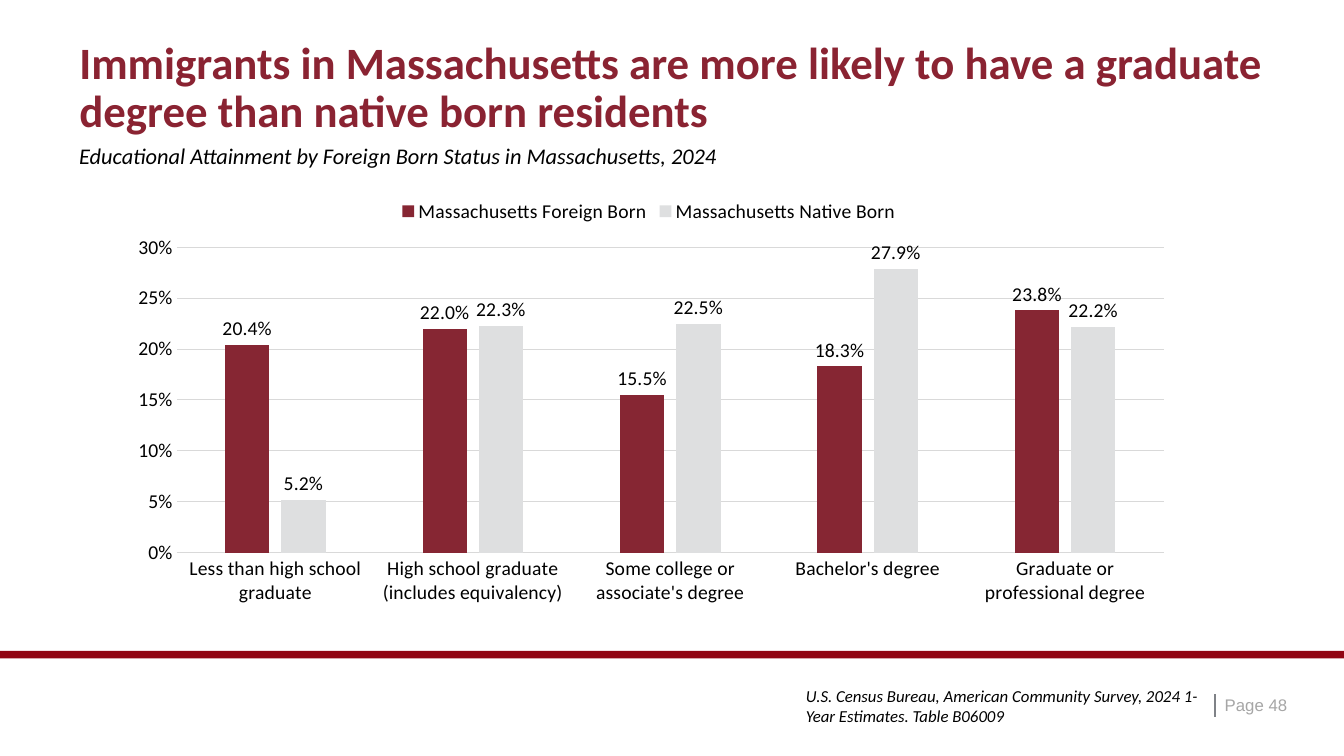
"""Build the slide on educational attainment by foreign born status."""
from dataclasses import dataclass

import pptx
import pptx.chart.data
import pptx.dml.color
import pptx.enum.chart
import pptx.enum.shapes
import pptx.enum.text
import pptx.oxml
import pptx.util
from lxml import etree

EMU_PER_PX = 9525


@dataclass(frozen=True)
class Theme:
    title_color: str = "8A2332"
    text_color: str = "000000"
    page_color: str = "A6A6A6"
    band_color: str = "910513"
    divider_color: str = "7F8287"
    grid_color: str = "D9D9D9"
    font: str = "Calibri"
    page_font: str = "Arial"
    title_size: int = 32
    subtitle_size: int = 16
    chart_size: int = 14
    small_size: int = 12


@dataclass(frozen=True)
class Box:
    left: int
    top: int
    width: int
    height: int

    def emu(self) -> tuple:
        return tuple(px(value) for value in (self.left, self.top, self.width, self.height))


@dataclass(frozen=True)
class Label:
    text: str
    box: Box
    size: int
    color: str
    font: str
    bold: bool = False
    italic: bool = False
    middle: bool = True
    line_spacing: float = 1.0


@dataclass(frozen=True)
class Series:
    name: str
    color: str
    values: tuple


THEME = Theme()

TITLE = Label(
    "Immigrants in Massachusetts are more likely to have a graduate degree than native born residents",
    Box(66, 49, 1149, 72), THEME.title_size, THEME.title_color, THEME.font, bold=True, line_spacing=0.9)
LABELS = (
    Label("Educational Attainment by Foreign Born Status in Massachusetts, 2024",
          Box(66, 134, 1104, 37), THEME.subtitle_size, THEME.text_color, THEME.font,
          italic=True, middle=False, line_spacing=0.9),
    Label("U.S. Census Bureau, American Community Survey, 2024 1-Year Estimates. Table B06009",
          Box(758, 648, 395, 48), THEME.small_size, THEME.text_color, THEME.font, italic=True),
    Label("Page 48", Box(1157, 661, 101, 21), THEME.small_size, THEME.page_color, THEME.page_font),
)
CATEGORIES = (
    "Less than high school graduate",
    "High school graduate (includes equivalency)",
    "Some college or associate's degree",
    "Bachelor's degree",
    "Graduate or professional degree",
)
SERIES = (
    Series("Massachusetts Foreign Born", "862633", (0.204, 0.22, 0.155, 0.183, 0.238)),
    Series("Massachusetts Native Born", "DEDFE0", (0.052, 0.223, 0.225, 0.279, 0.222)),
)
CHART_BOX = Box(107, 179, 1022, 404)
PLOT_FRACTIONS = {"x": 0.06, "y": 0.14, "w": 0.92, "h": 0.72}


def px(value: int) -> int:
    return pptx.util.Emu(value * EMU_PER_PX)


def rgb(color: str) -> pptx.dml.color.RGBColor:
    return pptx.dml.color.RGBColor.from_string(color)


def write_label(shape, label: Label) -> None:
    shape.left, shape.top, shape.width, shape.height = label.box.emu()
    frame = shape.text_frame
    frame.word_wrap = True
    frame.auto_size = pptx.enum.text.MSO_AUTO_SIZE.NONE
    anchors = pptx.enum.text.MSO_ANCHOR
    frame.vertical_anchor = anchors.MIDDLE if label.middle else anchors.TOP
    paragraph = frame.paragraphs[0]
    paragraph.alignment = pptx.enum.text.PP_ALIGN.LEFT
    paragraph.line_spacing = label.line_spacing
    run = paragraph.add_run()
    run.text = label.text
    run.font.name = label.font
    run.font.size = pptx.util.Pt(label.size)
    run.font.bold = label.bold
    run.font.italic = label.italic
    run.font.color.rgb = rgb(label.color)


def add_footer_lines(slide) -> None:
    band = slide.shapes.add_shape(
        pptx.enum.shapes.MSO_SHAPE.RECTANGLE, *Box(0, 620, 1280, 7).emu())
    band.shadow.inherit = False
    band.fill.solid()
    band.fill.fore_color.rgb = rgb(THEME.band_color)
    band.line.fill.background()
    divider = slide.shapes.add_connector(
        pptx.enum.shapes.MSO_CONNECTOR.STRAIGHT, px(1157), px(661), px(1157), px(683))
    divider.line.color.rgb = rgb(THEME.divider_color)
    divider.line.width = pptx.util.Pt(1.25)
    etree.SubElement(divider._element.spPr, pptx.oxml.ns.qn("a:effectLst"))


def style_chart_font(font) -> None:
    font.name = THEME.font
    font.size = pptx.util.Pt(THEME.chart_size)
    font.color.rgb = rgb(THEME.text_color)


def style_line(line) -> None:
    line.color.rgb = rgb(THEME.grid_color)
    line.width = pptx.util.Pt(0.75)


def place_plot(chart) -> None:
    qn = pptx.oxml.ns.qn
    plot_area = chart._chartSpace.chart.plotArea
    for layout in plot_area.findall(qn("c:layout")):
        plot_area.remove(layout)
    layout = etree.Element(qn("c:layout"))
    plot_area.insert(0, layout)
    manual = etree.SubElement(layout, qn("c:manualLayout"))
    settings = {"layoutTarget": "inner", "xMode": "edge", "yMode": "edge", **PLOT_FRACTIONS}
    for name, value in settings.items():
        etree.SubElement(manual, qn(f"c:{name}")).set("val", str(value))


def add_attainment_chart(slide) -> None:
    data = pptx.chart.data.CategoryChartData(number_format="0.0%")
    data.categories = CATEGORIES
    for series in SERIES:
        data.add_series(series.name, series.values)
    chart = slide.shapes.add_chart(
        pptx.enum.chart.XL_CHART_TYPE.COLUMN_CLUSTERED, *CHART_BOX.emu(), data).chart
    style_chart_font(chart.font)
    chart.has_title = False
    chart.has_legend = True
    chart.legend.position = pptx.enum.chart.XL_LEGEND_POSITION.TOP
    chart.legend.include_in_layout = False
    style_chart_font(chart.legend.font)
    for axis in (chart.category_axis, chart.value_axis):
        axis.major_tick_mark = pptx.enum.chart.XL_TICK_MARK.NONE
        axis.minor_tick_mark = pptx.enum.chart.XL_TICK_MARK.NONE
        style_chart_font(axis.tick_labels.font)
    style_line(chart.category_axis.format.line)
    value_axis = chart.value_axis
    value_axis.minimum_scale = 0
    value_axis.maximum_scale = 0.3
    value_axis.major_unit = 0.05
    value_axis.tick_labels.number_format = "0%"
    value_axis.tick_labels.number_format_is_linked = False
    value_axis.format.line.fill.background()
    style_line(value_axis.major_gridlines.format.line)
    plot = chart.plots[0]
    plot.vary_by_categories = False
    plot.gap_width = 219
    plot.overlap = -27
    for columns, series in zip(plot.series, SERIES):
        columns.format.fill.solid()
        columns.format.fill.fore_color.rgb = rgb(series.color)
        labels = columns.data_labels
        labels.show_value = True
        labels.position = pptx.enum.chart.XL_LABEL_POSITION.OUTSIDE_END
        labels.number_format = "0.0%"
        labels.number_format_is_linked = False
        style_chart_font(labels.font)
    place_plot(chart)


def main() -> None:
    presentation = pptx.Presentation()
    presentation.slide_width, presentation.slide_height = px(1280), px(720)
    slide = presentation.slides.add_slide(presentation.slide_layouts.get_by_name("Title Only"))
    write_label(slide.shapes.title, TITLE)
    add_footer_lines(slide)
    add_attainment_chart(slide)
    for label in LABELS:
        write_label(slide.shapes.add_textbox(*label.box.emu()), label)
    presentation.save("out.pptx")


if __name__ == "__main__":
    main()
